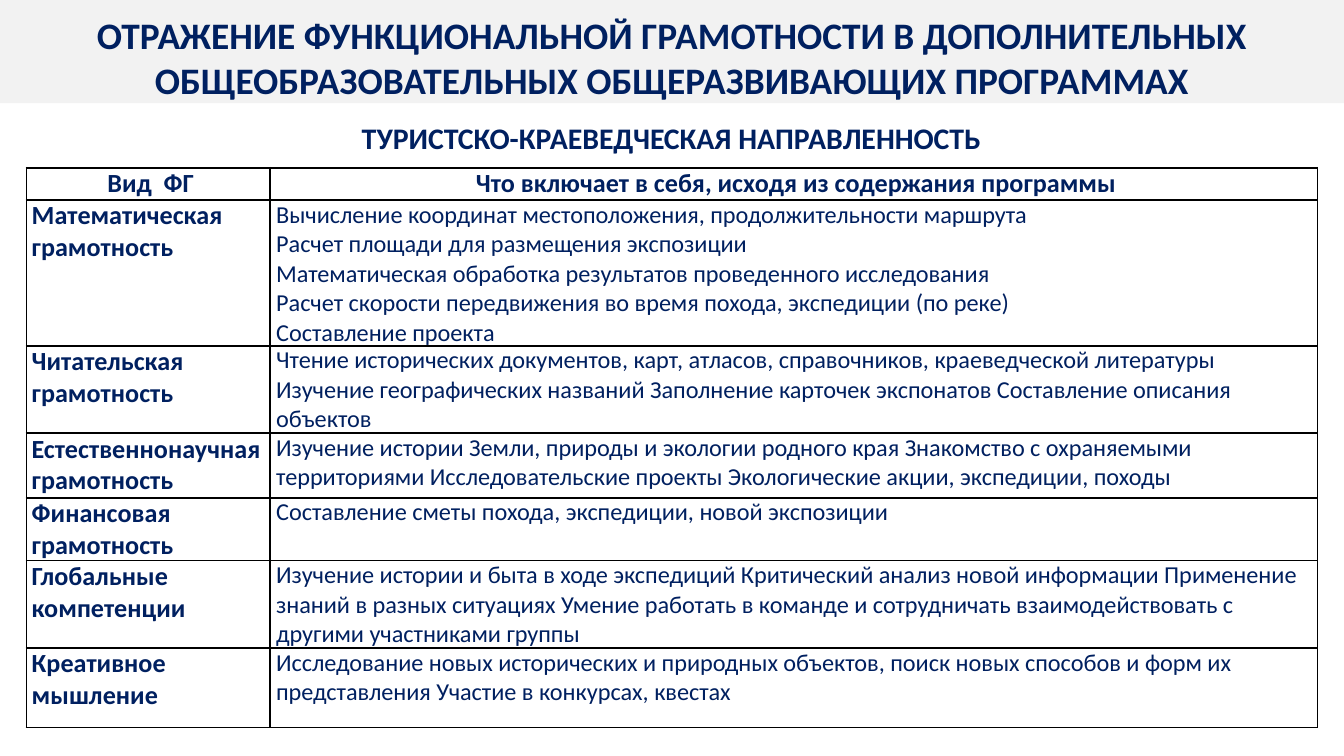
from dataclasses import dataclass

from lxml.etree import SubElement
from pptx import Presentation
from pptx.dml.color import RGBColor
from pptx.enum.shapes import MSO_SHAPE
from pptx.enum.text import MSO_ANCHOR, MSO_AUTO_SIZE, PP_ALIGN
from pptx.oxml.ns import qn
from pptx.util import Cm, Pt


@dataclass(frozen=True)
class Theme:
    font: str = "Calibri"
    ink: str = "002060"
    band: str = "F2F2F2"
    paper: str = "FFFFFF"
    rule: str = "000000"
    title: int = 20
    sub: int = 16
    head: int = 14
    body: int = 13


def write(frame, text, theme, size, bold=False, align=PP_ALIGN.LEFT, indent=0):
    """Fill a text frame, one paragraph for each line of text."""
    frame.text = text
    for para in frame.paragraphs:
        para.alignment = align
        if indent:
            para._p.get_or_add_pPr().set("marL", str(Cm(indent)))
        for run in para.runs:
            font = run.font
            font.name, font.size, font.bold = theme.font, Pt(size), bold
            font.color.rgb = RGBColor.from_string(theme.ink)


class Page:
    def __init__(self, deck, theme):
        self.theme = theme
        self.slide = deck.slides.add_slide(deck.slide_layouts[5])

    def title(self, text, x, y, w, h):
        box = self.slide.shapes.title
        box.left, box.top, box.width, box.height = map(Cm, (x, y, w, h))
        frame = box.text_frame
        frame.word_wrap = True
        frame.vertical_anchor = MSO_ANCHOR.TOP
        frame.auto_size = MSO_AUTO_SIZE.SHAPE_TO_FIT_TEXT
        write(frame, text, self.theme, self.theme.title, bold=True,
              align=PP_ALIGN.CENTER)

    def band(self, x, y, w, h):
        box = self.slide.shapes.add_shape(
            MSO_SHAPE.RECTANGLE, *map(Cm, (x, y, w, h)))
        box.shadow.inherit = False
        box.fill.solid()
        box.fill.fore_color.rgb = RGBColor.from_string(self.theme.band)
        box.line.fill.background()
        # The band lies behind the title
        self.slide.shapes.title.element.addprevious(box.element)

    def label(self, text, x, y, w, h):
        box = self.slide.shapes.add_textbox(*map(Cm, (x, y, w, h)))
        frame = box.text_frame
        frame.word_wrap = False
        frame.auto_size = MSO_AUTO_SIZE.SHAPE_TO_FIT_TEXT
        write(frame, text, self.theme, self.theme.sub, bold=True,
              align=PP_ALIGN.CENTER)

    def border(self, cell):
        props = cell._tc.get_or_add_tcPr()
        for side in ("a:lnL", "a:lnR", "a:lnT", "a:lnB"):
            line = SubElement(props, qn(side), w=str(Pt(1)))
            fill = SubElement(line, qn("a:solidFill"))
            SubElement(fill, qn("a:srgbClr"), val=self.theme.rule)

    def table(self, rows, x, y, widths, heights):
        theme = self.theme
        grid = self.slide.shapes.add_table(
            len(rows), len(widths),
            *map(Cm, (x, y, sum(widths), sum(heights)))).table
        grid.first_row = grid.horz_banding = False
        for col, width in zip(grid.columns, widths):
            col.width = Cm(width)
        for row, height in zip(grid.rows, heights):
            row.height = Cm(height)
        for i, texts in enumerate(rows):
            for j, text in enumerate(texts):
                cell = grid.cell(i, j)
                plain = i > 0 and j > 0
                side = Cm(0.02 if plain else 0)
                cell.margin_left = cell.margin_right = side
                cell.margin_top = cell.margin_bottom = 0
                self.border(cell)
                cell.fill.solid()
                cell.fill.fore_color.rgb = RGBColor.from_string(theme.paper)
                write(cell.text_frame, text, theme,
                      theme.body if plain else theme.head, bold=not plain,
                      align=PP_ALIGN.LEFT if i else PP_ALIGN.CENTER,
                      indent=0.1)


ROWS = [
    ("Вид  ФГ", "Что включает в себя, исходя из содержания программы"),
    ("Математическая\nграмотность",
     "Вычисление координат местоположения, продолжительности маршрута\n"
     "Расчет площади для размещения экспозиции\n"
     "Математическая обработка результатов проведенного исследования\n"
     "Расчет скорости передвижения во время похода, экспедиции (по реке)\n"
     "Составление проекта"),
    ("Читательская\nграмотность",
     "Чтение исторических документов, карт, атласов, справочников, "
     "краеведческой литературы Изучение географических названий "
     "Заполнение карточек экспонатов Составление описания объектов"),
    ("Естественнонаучная\nграмотность",
     "Изучение истории Земли, природы и экологии родного края "
     "Знакомство с охраняемыми территориями Исследовательские проекты "
     "Экологические акции, экспедиции, походы"),
    ("Финансовая\nграмотность",
     "Составление сметы похода, экспедиции, новой экспозиции"),
    ("Глобальные\nкомпетенции",
     "Изучение истории и быта в ходе экспедиций Критический анализ новой "
     "информации Применение знаний в разных ситуациях Умение работать в "
     "команде и сотрудничать взаимодействовать с другими участниками группы"),
    ("Креативное\nмышление",
     "Исследование новых исторических и природных объектов, поиск новых "
     "способов и форм их представления Участие в конкурсах, квестах"),
]


def main():
    deck = Presentation()
    deck.slide_width, deck.slide_height = Cm(25.4), Cm(14.29)
    page = Page(deck, Theme())

    # Heading on its band
    page.title("ОТРАЖЕНИЕ ФУНКЦИОНАЛЬНОЙ ГРАМОТНОСТИ В ДОПОЛНИТЕЛЬНЫХ "
               "ОБЩЕОБРАЗОВАТЕЛЬНЫХ ОБЩЕРАЗВИВАЮЩИХ ПРОГРАММАХ",
               0, 0.1, 25.4, 1.96)
    page.band(0, -0.05, 25.4, 2)

    # Kinds of literacy and what they include
    page.table(ROWS, 0.5, 3.17, widths=(4.6, 19.8),
               heights=(0.61, 2.46, 1.47, 1.22, 1.07, 1.47, 1.5))

    # Name of the programme area
    page.label("ТУРИСТСКО-КРАЕВЕДЧЕСКАЯ НАПРАВЛЕННОСТЬ",
               6.5, 2.13, 12.38, 0.94)

    deck.save("out.pptx")


if __name__ == "__main__":
    main()
